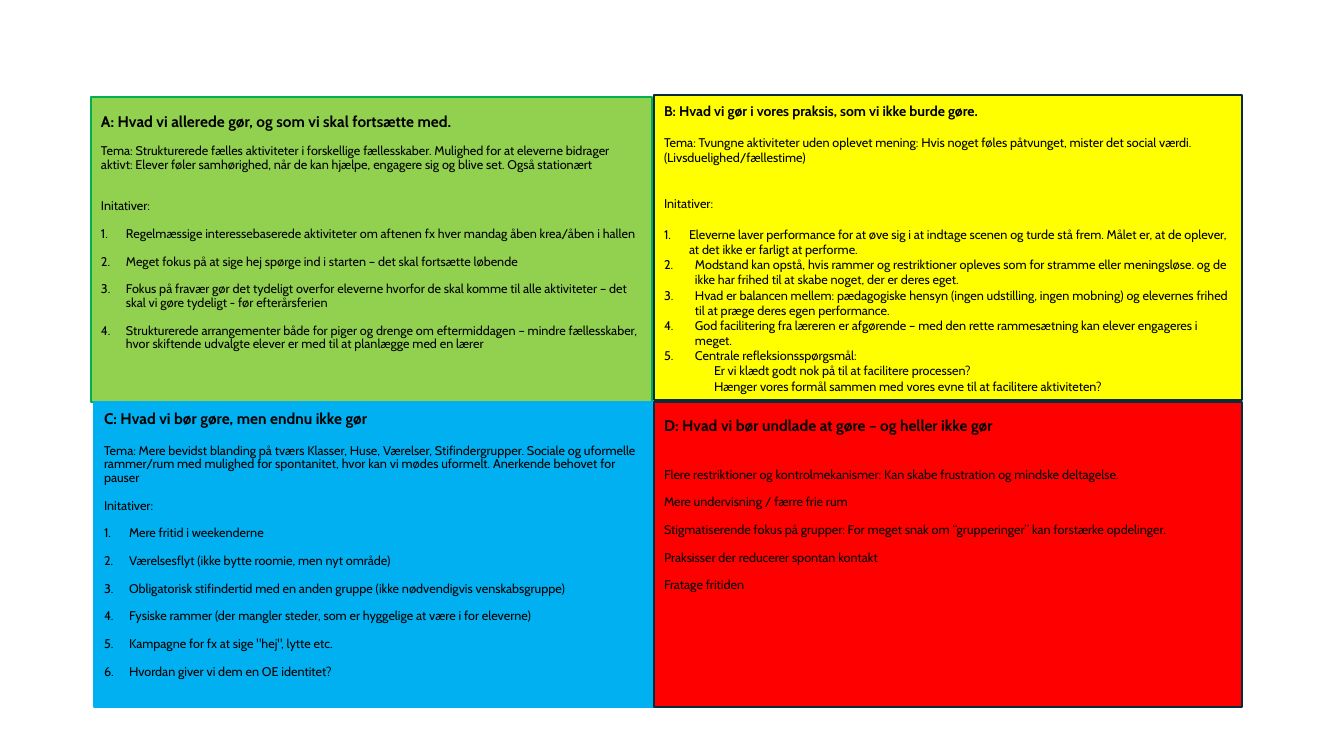
from dataclasses import dataclass

from lxml.etree import SubElement
from pptx import Presentation
from pptx.dml.color import RGBColor as Rgb
from pptx.enum.shapes import MSO_SHAPE as Shape
from pptx.enum.text import MSO_ANCHOR as Anchor, PP_ALIGN as Align
from pptx.oxml.ns import qn
from pptx.util import Pt


@dataclass(frozen=True)
class Theme:
    """Colours, font and type sizes."""
    font: str = "Cabin"
    ink: str = "000000"
    green: str = "92D050"
    leaf: str = "00B050"
    yellow: str = "FFFF00"
    blue: str = "00B0F0"
    red: str = "FF0000"
    navy: str = "092A39"
    head: int = 11
    small: int = 10
    body: int = 9
    edge: float = 1.5


@dataclass(frozen=True)
class Row:
    """One paragraph: text, space before in points, left and hanging px."""
    text: str
    gap: int = 0
    left: int = 0
    hang: int = 0


def items(gap, left, *texts):
    """Make numbered rows."""
    return [Row(text, gap, left, left) for text in texts]


class Deck:
    """Style and current slide."""

    def __init__(self, theme):
        """Start a deck with one blank slide."""
        self.theme = theme
        self.file = Presentation()
        self.file.slide_width = self.px(1344)
        self.file.slide_height = self.px(756)
        self.slide = self.file.slides.add_slide(self.file.slide_layouts[6])

    def px(self, size):
        """Turn px into EMU."""
        return round(size * 914400 / 100.8)

    def panel(self, box, fill, edge, top, size, lead, rows):
        """Draw a coloured panel with a heading and text rows."""
        shape = self.slide.shapes.add_shape(Shape.RECTANGLE, *map(self.px, box))
        shape.shadow.inherit = False
        shape.fill.solid()
        shape.fill.fore_color.rgb = Rgb.from_string(fill)
        shape.line.color.rgb = Rgb.from_string(edge)
        shape.line.width = Pt(self.theme.edge)
        frame = shape.text_frame
        frame.word_wrap = True
        frame.vertical_anchor = Anchor.TOP
        frame.margin_left = frame.margin_right = self.px(10)
        frame.margin_top = self.px(top)
        for spot, row in enumerate(rows):
            para = frame.add_paragraph() if spot else frame.paragraphs[0]
            self.put(para, row, lead, self.theme.body if spot else size, not spot)

    def put(self, para, row, lead, size, bold):
        """Fill and format one paragraph."""
        para.text = row.text
        para.alignment = Align.LEFT
        para.line_spacing = lead
        if row.gap:
            para.space_before = Pt(row.gap)
        props = para._p.get_or_add_pPr()
        props.set("marL", str(self.px(row.left)))
        props.set("indent", str(-self.px(row.hang)))
        if row.hang:
            SubElement(props, qn("a:buAutoNum"), type="arabicPeriod")
        for run in para.runs:
            run.font.name = self.theme.font
            run.font.size = Pt(size)
            run.font.bold = bold
            run.font.color.rgb = Rgb.from_string(self.theme.ink)

    def save(self):
        """Save the deck."""
        self.file.save("out.pptx")


def main():
    """Build the four panels."""
    look = Theme()
    deck = Deck(look)

    deck.panel((91, 97, 561, 305), look.green, look.leaf, 17, look.head, 0.9, [
        Row("A: Hvad vi allerede gør, og som vi skal fortsætte med."),
        Row("Tema: Strukturerede fælles aktiviteter i forskellige fællesskaber. "
            "Mulighed for at eleverne bidrager aktivt: Elever føler samhørighed, "
            "når de kan hjælpe, engagere sig og blive set. Også stationært", 10),
        Row("Initativer:", 20),
        *items(
            10, 25,
            "Regelmæssige interessebaserede aktiviteter om aftenen fx hver mandag "
            "åben krea/åben i hallen",
            "Meget fokus på at sige hej spørge ind i starten – det skal fortsætte løbende",
            "Fokus på fravær gør det tydeligt overfor eleverne hvorfor de skal komme "
            "til alle aktiviteter – det skal vi gøre tydeligt - før efterårsferien",
            "Strukturerede arrangementer både for piger og drenge om eftermiddagen – "
            "mindre fællesskaber, hvor skiftende udvalgte elever er med til at "
            "planlægge med en lærer"),
    ])

    deck.panel((654, 95, 588, 305), look.yellow, look.navy, 8, look.small, 1.0, [
        Row("B: Hvad vi gør i vores praksis, som vi ikke burde gøre."),
        Row("Tema: Tvungne aktiviteter uden oplevet mening: Hvis noget føles "
            "påtvunget, mister det social værdi. (Livsduelighed/fællestime)", 11),
        Row("Initativer:", 22),
        *items(
            11, 25,
            "Eleverne laver performance for at øve sig i at indtage scenen og turde "
            "stå frem. Målet er, at de oplever, at det ikke er farligt at performe."),
        *items(
            0, 31,
            "Modstand kan opstå, hvis rammer og restriktioner opleves som for stramme "
            "eller meningsløse. og de ikke har frihed til at skabe noget, der er deres eget.",
            "Hvad er balancen mellem: pædagogiske hensyn (ingen udstilling, ingen "
            "mobning) og elevernes frihed til at præge deres egen performance.",
            "God facilitering fra læreren er afgørende – med den rette rammesætning "
            "kan elever engageres i meget.",
            "Centrale refleksionsspørgsmål:"),
        Row("Er vi klædt godt nok på til at facilitere processen?", left=50),
        Row("Hænger vores formål sammen med vores evne til at facilitere "
            "aktiviteten?", left=50),
    ])

    deck.panel((94, 402, 560, 305), look.blue, look.blue, 9, look.head, 0.9, [
        Row("C: Hvad vi bør gøre, men endnu ikke gør"),
        Row("Tema: Mere bevidst blanding på tværs Klasser, Huse, Værelser, "
            "Stifindergrupper. Sociale og uformelle rammer/rum med mulighed for "
            "spontanitet, hvor kan vi mødes uformelt. Anerkende behovet for pauser", 12),
        Row("Initativer:", 10),
        *items(
            10, 25,
            "Mere fritid i weekenderne",
            "Værelsesflyt (ikke bytte roomie, men nyt område)",
            "Obligatorisk stifindertid med en anden gruppe (ikke nødvendigvis "
            "venskabsgruppe)",
            "Fysiske rammer (der mangler steder, som er hyggelige at være i for eleverne)",
            'Kampagne for fx at sige "hej", lytte etc.',
            "Hvordan giver vi dem en OE identitet?"),
    ])

    deck.panel((654, 402, 588, 305), look.red, look.navy, 16, look.head, 0.9, [
        Row("D: Hvad vi bør undlade at gøre – og heller ikke gør"),
        Row("Flere restriktioner og kontrolmekanismer: Kan skabe frustration og "
            "mindske deltagelse.", 24),
        Row("Mere undervisning / færre frie rum", 10),
        Row("Stigmatiserende fokus på grupper: For meget snak om “grupperinger” "
            "kan forstærke opdelinger.", 10),
        Row("Praksisser der reducerer spontan kontakt", 10),
        Row("Fratage fritiden", 10),
    ])
    deck.save()


if __name__ == "__main__":
    main()
